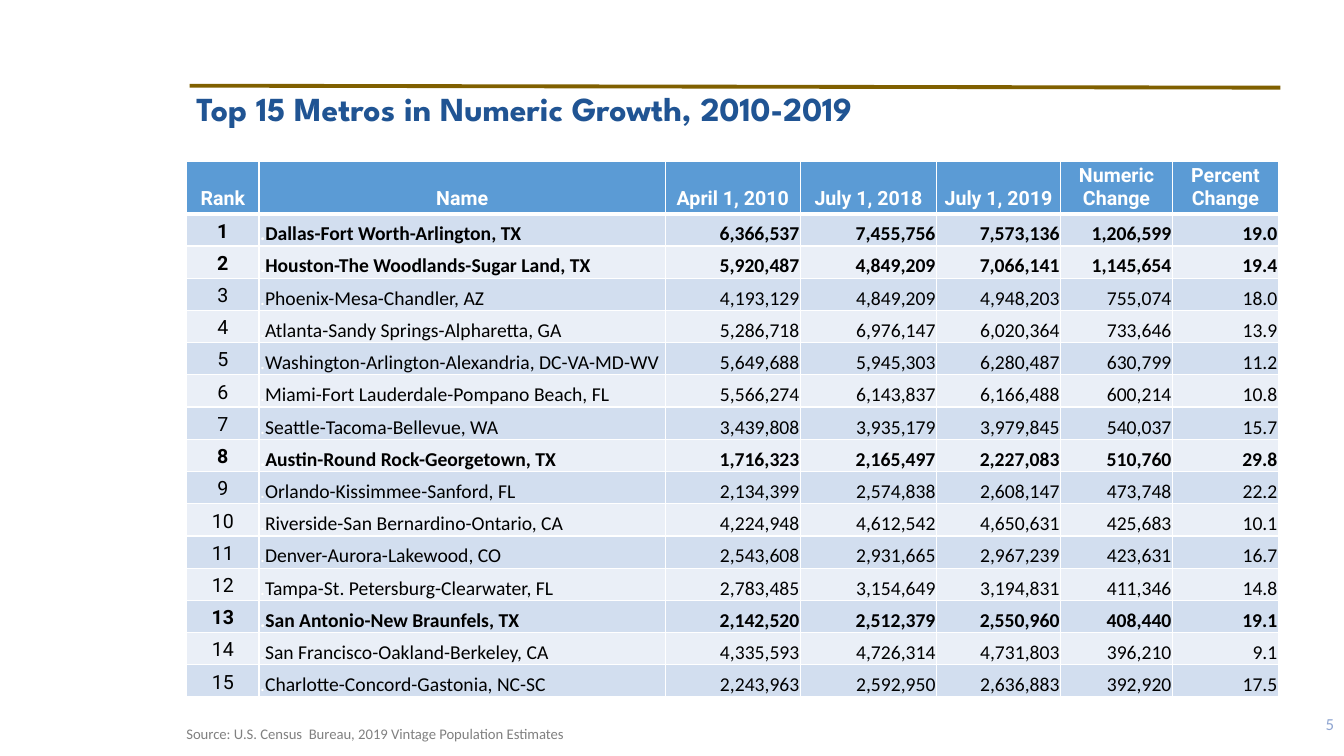
from lxml.etree import SubElement as Sub
from pptx import Presentation
from pptx.dml.color import RGBColor
from pptx.enum.shapes import MSO_CONNECTOR as Link
from pptx.enum.text import MSO_ANCHOR as Anchor, PP_ALIGN as Align
from pptx.oxml.ns import qn
from pptx.util import Inches, Pt

TITLE = "Top 15 Metros in Numeric Growth, 2010-2019"
SOURCE = "Source: U.S. Census  Bureau, 2019 Vintage Population Estimates"
PAGE = "5"
HEADS = ("Rank", "Name", "April 1, 2010", "July 1, 2018", "July 1, 2019",
         "Numeric Change", "Percent Change")
METROS = [
    ("Dallas-Fort Worth-Arlington, TX", "6,366,537", "7,455,756", "7,573,136", "1,206,599", "19.0"),
    ("Houston-The Woodlands-Sugar Land, TX", "5,920,487", "4,849,209", "7,066,141", "1,145,654", "19.4"),
    ("Phoenix-Mesa-Chandler, AZ", "4,193,129", "4,849,209", "4,948,203", "755,074", "18.0"),
    ("Atlanta-Sandy Springs-Alpharetta, GA", "5,286,718", "6,976,147", "6,020,364", "733,646", "13.9"),
    ("Washington-Arlington-Alexandria, DC-VA-MD-WV", "5,649,688", "5,945,303", "6,280,487", "630,799", "11.2"),
    ("Miami-Fort Lauderdale-Pompano Beach, FL", "5,566,274", "6,143,837", "6,166,488", "600,214", "10.8"),
    ("Seattle-Tacoma-Bellevue, WA", "3,439,808", "3,935,179", "3,979,845", "540,037", "15.7"),
    ("Austin-Round Rock-Georgetown, TX", "1,716,323", "2,165,497", "2,227,083", "510,760", "29.8"),
    ("Orlando-Kissimmee-Sanford, FL", "2,134,399", "2,574,838", "2,608,147", "473,748", "22.2"),
    ("Riverside-San Bernardino-Ontario, CA", "4,224,948", "4,612,542", "4,650,631", "425,683", "10.1"),
    ("Denver-Aurora-Lakewood, CO", "2,543,608", "2,931,665", "2,967,239", "423,631", "16.7"),
    ("Tampa-St. Petersburg-Clearwater, FL", "2,783,485", "3,154,649", "3,194,831", "411,346", "14.8"),
    ("San Antonio-New Braunfels, TX", "2,142,520", "2,512,379", "2,550,960", "408,440", "19.1"),
    ("San Francisco-Oakland-Berkeley, CA", "4,335,593", "4,726,314", "4,731,803", "396,210", "9.1"),
    ("Charlotte-Concord-Gastonia, NC-SC", "2,243,963", "2,592,950", "2,636,883", "392,920", "17.5"),
]
WIDTHS = (0.72, 4.03, 1.34, 1.35, 1.23, 1.11, 1.05)
HEAD_H, ROW_H = 0.52, 0.32
BANDS = ("D2DEEF", "EAEFF7")
WIDE, TIGHT = (0.07, 0.03, 0.07, 0.03), (0.01, 0.01, 0.01, 0)
SIDES = ("left", "top", "right", "bottom")


def color(code):
    return RGBColor.from_string(code)


def put(para, text, size, face, code, bold=False):
    """Add a styled run to a paragraph."""
    run = para.add_run()
    run.text = text
    for key, value in {"size": Pt(size), "name": face, "bold": bold}.items():
        setattr(run.font, key, value)
    run.font.color.rgb = color(code)


def add_text(slide, place, style, **form):
    box = slide.shapes.add_textbox(*map(Inches, place))
    box.text_frame.word_wrap = True
    para = box.text_frame.paragraphs[0]
    for key, value in form.items():
        setattr(para, key, value)
    put(para, *style)
    return box


def dress(cell, fill, inset, low):
    """Set borders, fill and margins; low is the bottom border in points."""
    props = cell._tc.get_or_add_tcPr()
    for side, width in zip("LRTB", (1, 1, 1, low)):
        line = Sub(props, qn("a:ln" + side), w=str(Pt(width)))
        Sub(Sub(line, qn("a:solidFill")), qn("a:srgbClr"), val="FFFFFF")
    cell.fill.solid()
    cell.fill.fore_color.rgb = color(fill)
    cell.vertical_anchor = Anchor.BOTTOM
    for side, value in zip(SIDES, inset):
        setattr(cell, "margin_" + side, Inches(value))


def add_grid(slide):
    count = len(METROS) + 1
    high = HEAD_H + ROW_H * len(METROS)
    grid = slide.shapes.add_table(count, len(WIDTHS), Inches(1.85), Inches(1.6),
                                  Inches(sum(WIDTHS)), Inches(high)).table
    for col, width in zip(grid.columns, WIDTHS):
        col.width = Inches(width)
    for i, row in enumerate(grid.rows):
        row.height = Inches(ROW_H if i else HEAD_H)

    for j, head in enumerate(HEADS):
        cell = grid.cell(0, j)
        dress(cell, "5B9BD5", WIDE, 3)
        para = cell.text_frame.paragraphs[0]
        para.alignment = Align.CENTER
        put(para, head, 14, "Roboto", "FFFFFF", True)

    for i, metro in enumerate(METROS, 1):
        bold = metro[0].endswith(", TX")
        for j, text in enumerate((str(i), *metro)):
            cell = grid.cell(i, j)
            dress(cell, BANDS[(i - 1) % 2], TIGHT if j else WIDE, 1)
            para = cell.text_frame.paragraphs[0]
            para.alignment = (Align.CENTER, Align.LEFT, Align.RIGHT)[min(j, 2)]
            if j == 1:
                put(para, ".", 14, "Calibri", "FFFFFF", bold)
            put(para, text, 14, "Calibri" if j else "Roboto", "000000", bold)


def main():
    deck = Presentation()
    deck.slide_width, deck.slide_height = Inches(13.33), Inches(7.5)
    slide = deck.slides.add_slide(deck.slide_layouts[6])

    rule = slide.shapes.add_connector(Link.STRAIGHT, *map(Inches, (1.88, 0.85, 12.7, 0.87)))
    rule.line.color.rgb = color("806000")
    rule.line.width = Pt(2.75)
    Sub(rule._element.spPr, qn("a:effectLst"))

    add_grid(slide)
    page = add_text(slide, (12.14, 7.01, 1.19, 0.34), (PAGE, 12, "Calibri", "8FA5D1"),
                    alignment=Align.RIGHT)
    page.text_frame.vertical_anchor = Anchor.MIDDLE
    add_text(slide, (1.75, 7.13, 5, 0.29), (SOURCE, 10.5, "Calibri", "808080"),
             line_spacing=1.07)
    add_text(slide, (1.85, 0.87, 10.82, 0.6),
             (TITLE, 24, "League Spartan", "205493", True), line_spacing=0.9)
    deck.save("out.pptx")


if __name__ == "__main__":
    main()
